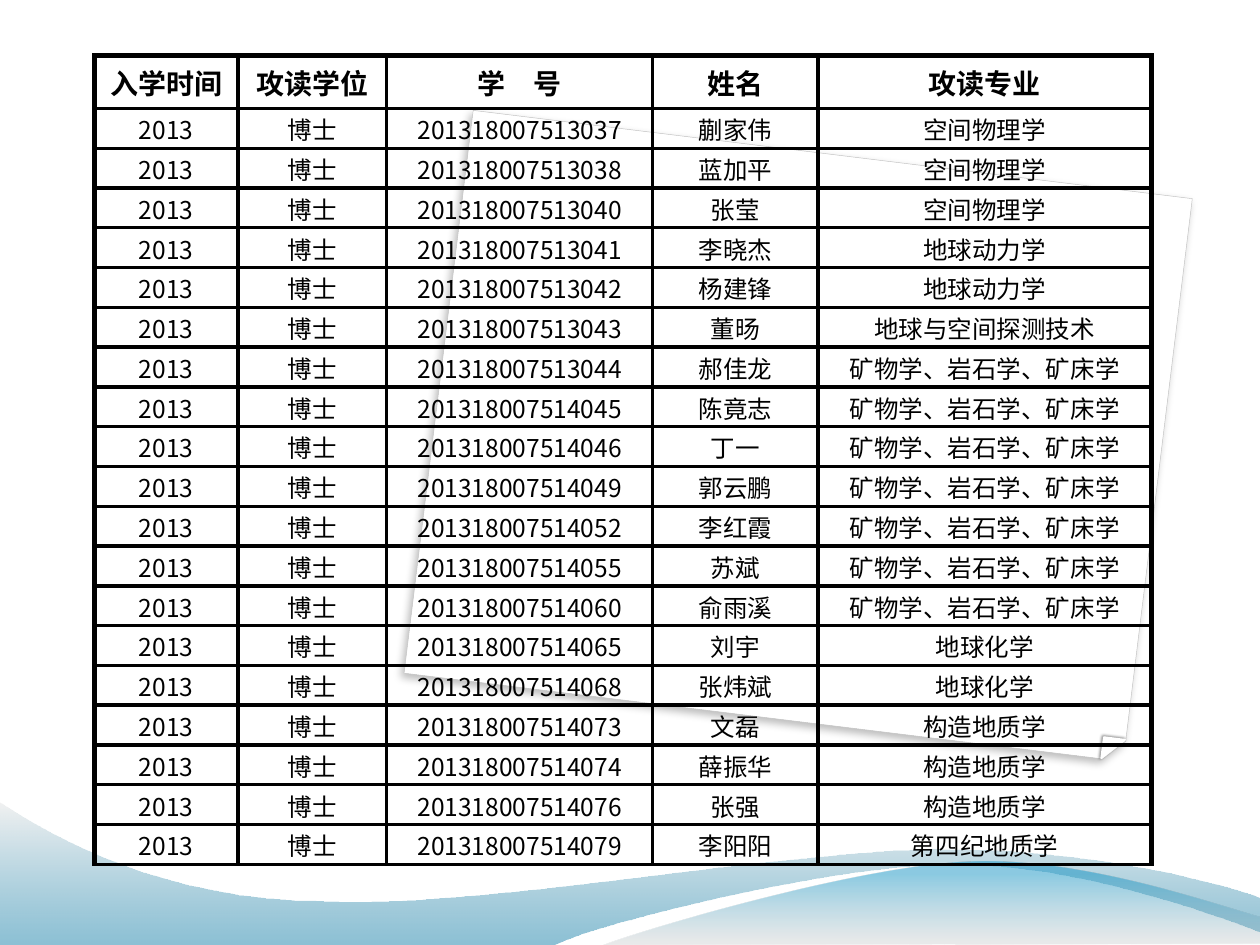
"""Build the slide listing the doctoral students enrolled in 2013."""
from dataclasses import dataclass

from lxml import etree
from pptx import Presentation
from pptx.dml.color import RGBColor
from pptx.enum import shapes, text
from pptx.oxml import ns
from pptx.util import Pt

Point = tuple[float, float]


@dataclass(frozen=True)
class Theme:
    font: str = "Noto Sans CJK SC"
    ink: str = "000000"
    paper: str = "FFFFFF"
    paper_edge: str = "C0C0C0"
    header_size: float = 16
    body_size: float = 14
    grid_width: float = 2.25
    frame_width: float = 3


@dataclass(frozen=True)
class Shadow:
    opacity: float
    blur: float
    distance: float
    angle: float


@dataclass(frozen=True)
class Sheet:
    kind: shapes.MSO_SHAPE
    left: float
    top: float
    width: float
    height: float
    edge: str
    edge_width: float
    shadow: Shadow
    adjustments: tuple[float, ...] = ()


@dataclass(frozen=True)
class Stop:
    position: float
    color: str
    opacity: float


@dataclass(frozen=True)
class Wave:
    start: Point
    segments: tuple[tuple[Point, ...], ...]
    stops: tuple[Stop, Stop]


@dataclass(frozen=True)
class Student:
    number: str
    name: str
    major: str


THEME = Theme()
TILT = 7
MINERALS = "矿物学、岩石学、矿床学"
HEADERS = ("入学时间", "攻读学位", "学　号", "姓名", "攻读专业")
COLUMN_WIDTHS = (82, 85, 152, 94.5, 190.5)
TABLE_LEFT, TABLE_TOP = 54, 31.7
HEADER_HEIGHT, ROW_HEIGHT = 27.4, 22.75
NUMBER_PREFIX = "20131800751"
STUDENTS = tuple(Student(NUMBER_PREFIX + suffix, name, major) for suffix, name, major in (
    ("3037", "蒯家伟", "空间物理学"),
    ("3038", "蓝加平", "空间物理学"),
    ("3040", "张莹", "空间物理学"),
    ("3041", "李晓杰", "地球动力学"),
    ("3042", "杨建锋", "地球动力学"),
    ("3043", "董旸", "地球与空间探测技术"),
    ("3044", "郝佳龙", MINERALS),
    ("4045", "陈竟志", MINERALS),
    ("4046", "丁一", MINERALS),
    ("4049", "郭云鹏", MINERALS),
    ("4052", "李红霞", MINERALS),
    ("4055", "苏斌", MINERALS),
    ("4060", "俞雨溪", MINERALS),
    ("4065", "刘宇", "地球化学"),
    ("4068", "张炜斌", "地球化学"),
    ("4073", "文磊", "构造地质学"),
    ("4074", "薛振华", "构造地质学"),
    ("4076", "张强", "构造地质学"),
    ("4079", "李阳阳", "第四纪地质学"),
))
SHEETS = (
    Sheet(shapes.MSO_SHAPE.SNIP_ROUND_RECTANGLE, 249.1, 87.1, 414, 324,
          THEME.paper_edge, 0.25, Shadow(25, 5, 3, 125), (0, 0.036)),
    Sheet(shapes.MSO_SHAPE.RIGHT_TRIANGLE, 630, 421.9, 12.2, 12.2,
          THEME.paper, 1, Shadow(47, 1.6, 0.5, 215)),
)
WAVES = (
    Wave((0, 540), (
        ((316.8, 540),),
        ((342.7, 527), (478.1, 493.9), (545.8, 493.9)),
        ((614.2, 493.9), (689.8, 521.3), (720, 532.8)),
        ((720.7, 513.4),),
        ((707.8, 507.6), (626.4, 484.6), (537.1, 485.3)),
        ((447.8, 485.3), (275, 519.1), (185, 514.8)),
        ((92.9, 514.1), (33.1, 479.5), (-0.7, 457.9)),
    ), (Stop(0, "0074A1", 45), Stop(1, "E7E7E7", 55))),
    Wave((344.9, 540), (
        ((366.5, 531.4), (491, 494.6), (553.7, 492.5)),
        ((616.3, 489.6), (691.9, 516.2), (720, 524.2)),
        ((720, 539.3),),
    ), (Stop(0, "BDBDBD", 30), Stop(0.8, "008BBF", 45))),
)


def add_xml(parent, tag: str, **attributes):
    child = etree.SubElement(parent, ns.qn(tag))
    for key, value in attributes.items():
        child.set(key, str(value))
    return child


def add_sheet(page, sheet: Sheet) -> None:
    box = page.shapes.add_shape(
        sheet.kind, *map(Pt, (sheet.left, sheet.top, sheet.width, sheet.height)))
    for index, value in enumerate(sheet.adjustments):
        box.adjustments[index] = value
    box.rotation = TILT
    box.element.spPr.xfrm.set("flipV", "1")
    box.fill.solid()
    box.fill.fore_color.rgb = RGBColor.from_string(THEME.paper)
    box.line.color.rgb = RGBColor.from_string(sheet.edge)
    box.line.width = Pt(sheet.edge_width)
    box.shadow.inherit = False
    shadow = sheet.shadow
    outer = add_xml(box.element.spPr.find(ns.qn("a:effectLst")), "a:outerShdw",
                    blurRad=Pt(shadow.blur), dist=Pt(shadow.distance),
                    dir=shadow.angle * 60000, algn="tl", rotWithShape=0)
    color = add_xml(outer, "a:srgbClr", val=THEME.ink)
    add_xml(color, "a:alpha", val=shadow.opacity * 1000)


def add_wave(page, wave: Wave) -> None:
    builder = page.shapes.build_freeform(*map(Pt, wave.start))
    builder.add_line_segments(
        [tuple(map(Pt, point)) for segment in wave.segments for point in segment], close=True)
    box = builder.convert_to_shape()
    lines = iter(list(box.element.iter(ns.qn("a:lnTo"))))
    for segment in wave.segments:
        group = [next(lines) for _ in segment]
        if len(group) == 3:
            curve = etree.Element(ns.qn("a:cubicBezTo"))
            group[0].addprevious(curve)
            for line in group:
                curve.append(line[0])
                line.getparent().remove(line)
    box.shadow.inherit = False
    box.line.fill.background()
    box.fill.gradient()
    box.fill.gradient_angle = 90
    for target, stop in zip(box.fill.gradient_stops, wave.stops):
        target.position = stop.position
        target.color.rgb = RGBColor.from_string(stop.color)
    for color, stop in zip(box.element.spPr.iter(ns.qn("a:srgbClr")), wave.stops):
        add_xml(color, "a:alpha", val=stop.opacity * 1000)


def write_text(cell, content: str, *, size: float, bold: bool = False) -> None:
    para = cell.text_frame.paragraphs[0]
    para.alignment = text.PP_ALIGN.CENTER
    span = para.add_run()
    span.text = content
    span.font.size, span.font.bold, span.font.name = Pt(size), bold, THEME.font
    span.font.color.rgb = RGBColor.from_string(THEME.ink)
    add_xml(span.font._element, "a:ea", typeface=THEME.font)


def set_borders(cell, **widths: float) -> None:
    properties = cell._tc.get_or_add_tcPr()
    for side in "LRTB":
        line = add_xml(properties, f"a:ln{side}", w=Pt(widths.get(side, THEME.grid_width)))
        add_xml(add_xml(line, "a:solidFill"), "a:srgbClr", val=THEME.ink)
    cell.fill.background()


def add_student_table(page) -> None:
    rows = [HEADERS] + [("2013", "博士", s.number, s.name, s.major) for s in STUDENTS]
    height = HEADER_HEIGHT + ROW_HEIGHT * len(STUDENTS)
    table = page.shapes.add_table(len(rows), len(HEADERS), *map(
        Pt, (TABLE_LEFT, TABLE_TOP, sum(COLUMN_WIDTHS), height))).table
    table.first_row = table.horz_banding = False
    for column, width in zip(table.columns, COLUMN_WIDTHS):
        column.width = Pt(width)
    for r, values in enumerate(rows):
        header = r == 0
        table.rows[r].height = Pt(HEADER_HEIGHT if header else ROW_HEIGHT)
        for c, value in enumerate(values):
            cell = table.cell(r, c)
            cell.vertical_anchor = text.MSO_ANCHOR.MIDDLE
            if not header:
                cell.margin_left = cell.margin_right = cell.margin_top = Pt(0.72)
                cell.margin_bottom = 0
            write_text(cell, value, bold=header,
                       size=THEME.header_size if header else THEME.body_size)
            outer = {"T": header, "L": c == 0, "R": c == len(HEADERS) - 1}
            set_borders(cell, **{side: THEME.frame_width for side, on in outer.items() if on})


def main() -> None:
    deck = Presentation()
    deck.slide_width, deck.slide_height = Pt(720), Pt(540)
    page = deck.slides.add_slide(deck.slide_layouts[6])
    for sheet in SHEETS:
        add_sheet(page, sheet)
    for wave in WAVES:
        add_wave(page, wave)
    add_student_table(page)
    deck.save("out.pptx")


if __name__ == "__main__":
    main()
